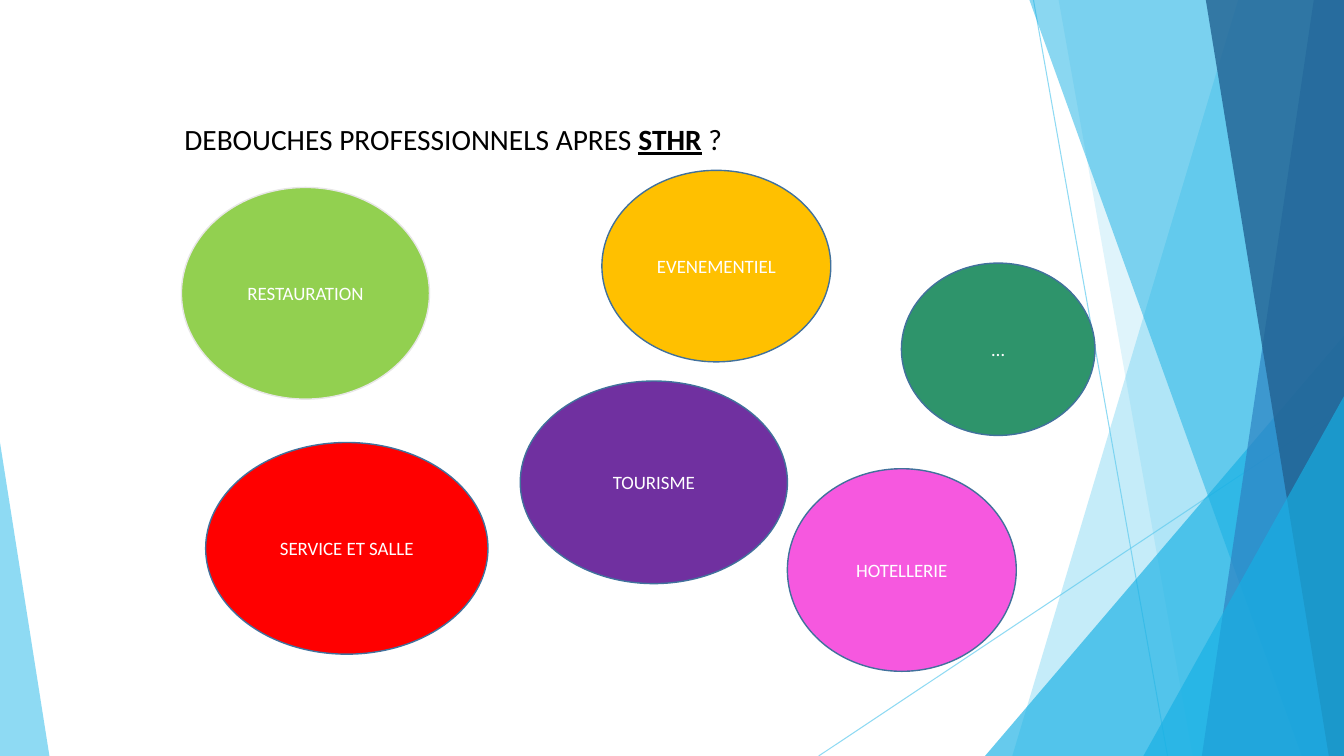
from dataclasses import dataclass

from lxml import etree
from pptx import Presentation
from pptx.dml.color import RGBColor
from pptx.enum.shapes import MSO_CONNECTOR, MSO_SHAPE
from pptx.enum.text import MSO_ANCHOR, MSO_AUTO_SIZE, PP_ALIGN
from pptx.oxml.ns import qn
from pptx.util import Emu, Pt

OVAL = MSO_SHAPE.OVAL
TRIANGLE = MSO_SHAPE.ISOSCELES_TRIANGLE
STRAIGHT = MSO_CONNECTOR.STRAIGHT
CENTER = PP_ALIGN.CENTER
MIDDLE = MSO_ANCHOR.MIDDLE
GROW = MSO_AUTO_SIZE.SHAPE_TO_FIT_TEXT

EMU_PER_PX = 9144
SLIDE_W, SLIDE_H = 1333, 750


@dataclass(frozen=True)
class Theme:
    font: str = "Calibri"
    title_size: float = 21
    label_size: float = 13.5
    hairline: float = 0.75
    outline_width: float = 1
    text: str = "000000"
    label: str = "FFFFFF"
    outline: str = "41719C"
    pale_outline: str = "E7E6E6"
    sky: str = "5FCBEF"
    cyan: str = "17B0E4"
    blue: str = "2E83C3"
    navy: str = "226292"
    green: str = "92D050"
    red: str = "FF0000"
    purple: str = "7030A0"
    amber: str = "FFC000"
    pink: str = "F658DF"
    teal: str = "2E946B"


THEME = Theme()


@dataclass(frozen=True)
class Ray:
    x1: int
    y1: int
    x2: int
    y2: int


@dataclass(frozen=True)
class Panel:
    top_x: int
    bottom_x: int
    color: str
    opacity: int


@dataclass(frozen=True)
class Wedge:
    x: int
    y: int
    w: int
    apex: float
    color: str
    opacity: int


@dataclass(frozen=True)
class Bubble:
    text: str
    x: int
    y: int
    w: int
    h: int
    fill: str
    outline: str = THEME.outline


RAYS = [Ray(1025, 0, 1158, 750), Ray(1333, 403, 812, 750)]

DECOR = [
    Panel(1228, 1004, THEME.sky, 36),
    Panel(1050, 1183, THEME.sky, 20),
    Wedge(977, 333, 356, 1, THEME.cyan, 66),
    Panel(1021, 1291, THEME.cyan, 50),
    Panel(1303, 1192, THEME.blue, 70),
    Panel(1196, 1318, THEME.navy, 80),
    Wedge(1134, 393, 199, 1, THEME.cyan, 66),
    Wedge(0, 439, 49, 0, THEME.sky, 70),
]

BUBBLES = [
    Bubble("RESTAURATION", 180, 186, 246, 210, THEME.green, THEME.pale_outline),
    Bubble("SERVICE ET SALLE", 204, 439, 280, 210, THEME.red),
    Bubble("TOURISME", 516, 378, 265, 201, THEME.purple),
    Bubble("EVENEMENTIEL", 597, 169, 227, 190, THEME.amber),
    Bubble("HOTELLERIE", 781, 465, 227, 201, THEME.pink),
    Bubble("…", 894, 261, 192, 171, THEME.teal),
]


def px(n: int) -> Emu:
    return Emu(n * EMU_PER_PX)


def rgb(color: str) -> RGBColor:
    return RGBColor.from_string(color)


def set_opacity(shape, percent: int) -> None:
    clr = shape._element.spPr.find(".//" + qn("a:srgbClr"))
    etree.SubElement(clr, qn("a:alpha")).set("val", str(percent * 1000))


def add_run(p, text: str, *, size: float, color: str, strong: bool = False) -> None:
    r = p.add_run()
    r.text = text
    r.font.name = THEME.font
    r.font.size = Pt(size)
    r.font.color.rgb = rgb(color)
    r.font.bold = strong
    r.font.underline = strong


def draw_ray(s, ray: Ray) -> None:
    cx = s.shapes.add_connector(STRAIGHT, px(ray.x1), px(ray.y1), px(ray.x2), px(ray.y2))
    cx.line.color.rgb = rgb(THEME.sky)
    cx.line.width = Pt(THEME.hairline)
    set_opacity(cx, 70)
    etree.SubElement(cx._element.spPr, qn("a:effectLst"))


def draw_decor(s, item: Panel | Wedge) -> None:
    if isinstance(item, Panel):
        fb = s.shapes.build_freeform(item.top_x, 0, scale=EMU_PER_PX)
        fb.add_line_segments([(SLIDE_W, 0), (SLIDE_W, SLIDE_H), (item.bottom_x, SLIDE_H)])
        sp = fb.convert_to_shape()
    else:
        sp = s.shapes.add_shape(
            TRIANGLE, px(item.x), px(item.y), px(item.w), px(SLIDE_H - item.y)
        )
        sp.adjustments[0] = item.apex
    sp.shadow.inherit = False
    sp.fill.solid()
    sp.fill.fore_color.rgb = rgb(item.color)
    sp.line.fill.background()
    set_opacity(sp, item.opacity)


def draw_bubble(s, b: Bubble) -> None:
    sp = s.shapes.add_shape(OVAL, px(b.x), px(b.y), px(b.w), px(b.h))
    sp.shadow.inherit = False
    sp.fill.solid()
    sp.fill.fore_color.rgb = rgb(b.fill)
    sp.line.color.rgb = rgb(b.outline)
    sp.line.width = Pt(THEME.outline_width)
    tf = sp.text_frame
    tf.word_wrap = True
    tf.vertical_anchor = MIDDLE
    p = tf.paragraphs[0]
    p.alignment = CENTER
    add_run(p, b.text, size=THEME.label_size, color=THEME.label)


def draw_title(s) -> None:
    tf = s.shapes.add_textbox(px(173), px(115), px(791), px(45)).text_frame
    tf.word_wrap = True
    tf.auto_size = GROW
    p = tf.paragraphs[0]
    for text, strong in [
        ("DEBOUCHES PROFESSIONNELS APRES ", False),
        ("STHR", True),
        (" ?", False),
    ]:
        add_run(p, text, size=THEME.title_size, color=THEME.text, strong=strong)


def main() -> None:
    prs = Presentation()
    prs.slide_width, prs.slide_height = px(SLIDE_W), px(SLIDE_H)
    s = prs.slides.add_slide(prs.slide_layouts[6])
    for ray in RAYS:
        draw_ray(s, ray)
    for item in DECOR:
        draw_decor(s, item)
    for bubble in BUBBLES:
        draw_bubble(s, bubble)
    draw_title(s)
    prs.save("out.pptx")


if __name__ == "__main__":
    main()
